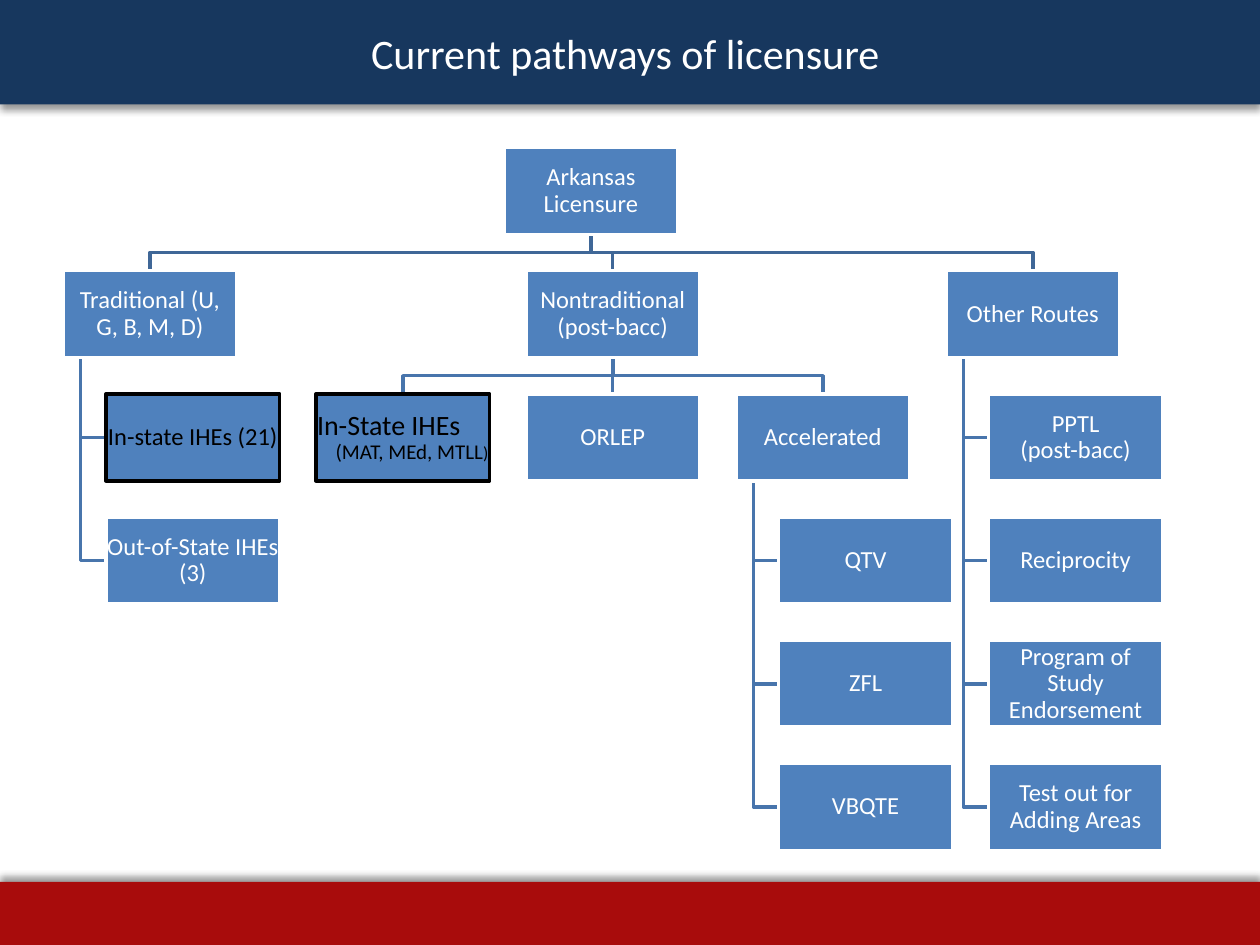
from dataclasses import dataclass, field

from lxml import etree
from pptx import Presentation
from pptx.dml.color import RGBColor
from pptx.enum.shapes import MSO_CONNECTOR, MSO_SHAPE
from pptx.enum.text import MSO_ANCHOR, PP_ALIGN
from pptx.oxml.ns import qn
from pptx.util import Inches, Pt

NAVY, RED, BLUE = "17375E", "A80C0C", "4F81BD"
WHITE, BLACK = "FFFFFF", "000000"
TOP_LINE, SUB_LINE = "3F6797", "4875AC"

# Chart grid, in inches relative to the chart box
NODE_W, NODE_H = 1.38, 0.69
COL, ROW = 5 / 3, 4.89 / 5
INDENT, TRUNK = 0.34, 0.14


@dataclass
class Node:
    text: object  # a string, or paragraphs of (alignment, [(text, size), ...])
    x: float = 0
    children: list = field(default_factory=list)
    hanging: bool = False
    outlined: bool = False


def rgb(value):
    return RGBColor.from_string(value)


def column(index):
    return INDENT + index * COL


def add_run(p, text, size, color):
    r = p.add_run()
    r.text = text
    r.font.size = Pt(size)
    r.font.name = "Calibri"
    r.font.color.rgb = rgb(color)


def add_box(s, left, top, width, height, fill):
    sp = s.shapes.add_shape(MSO_SHAPE.RECTANGLE, Inches(left), Inches(top),
                            Inches(width), Inches(height))
    sp.shadow.inherit = False
    sp.fill.solid()
    sp.fill.fore_color.rgb = rgb(fill)
    sp.line.fill.background()
    return sp


def add_band(s, left, top, width, height, fill, shadow_angle, title=None):
    """Full-width band with a soft shadow and an optional title."""
    sp = add_box(s, left, top, width, height, fill)
    effects = sp._element.spPr.find(qn("a:effectLst"))
    shadow = etree.SubElement(effects, qn("a:outerShdw"), blurRad=str(Pt(4)),
                              dist=str(Pt(3)), dir=str(shadow_angle * 60000),
                              rotWithShape="0")
    color = etree.SubElement(shadow, qn("a:srgbClr"), val=BLACK)
    etree.SubElement(color, qn("a:alpha"), val="40000")
    if title:
        tf = sp.text_frame
        tf.vertical_anchor = MSO_ANCHOR.MIDDLE
        p = tf.paragraphs[0]
        p.alignment = PP_ALIGN.CENTER
        add_run(p, title, 24, WHITE)


def add_link(s, points, color):
    """Straight connector for two points, open elbow line for more."""
    points = [(Inches(x), Inches(y)) for x, y in points]
    if len(points) == 2:
        sp = s.shapes.add_connector(MSO_CONNECTOR.STRAIGHT, *points[0], *points[1])
        etree.SubElement(sp._element.spPr, qn("a:effectLst"))
    else:
        builder = s.shapes.build_freeform(*points[0])
        builder.add_line_segments(points[1:], close=False)
        sp = builder.convert_to_shape()
        sp.fill.background()
        sp.shadow.inherit = False
    sp.line.color.rgb = rgb(color)
    sp.line.width = Pt(2)


def add_node(s, left, top, node):
    sp = add_box(s, left, top, NODE_W, NODE_H, BLUE)
    ink = BLACK if node.outlined else WHITE
    sp.line.color.rgb = rgb(ink)
    sp.line.width = Pt(2)
    tf = sp.text_frame
    tf.word_wrap = True
    tf.vertical_anchor = MSO_ANCHOR.MIDDLE
    tf.margin_left = tf.margin_right = tf.margin_top = tf.margin_bottom = Inches(0.01)
    paragraphs = node.text
    if isinstance(paragraphs, str):
        paragraphs = [(PP_ALIGN.CENTER, [(line, 14)]) for line in paragraphs.split("\n")]
    for i, (alignment, runs) in enumerate(paragraphs):
        p = tf.add_paragraph() if i else tf.paragraphs[0]
        p.alignment = alignment
        p.line_spacing = 0.9
        for text, size in runs:
            add_run(p, text, size, ink)


def add_tree(s, left, top, node, row=0):
    """Places a node and its branch; links go behind the boxes they join."""
    x, y = left + node.x, top + row * ROW
    bottom, next_top = y + NODE_H, y + ROW
    color = SUB_LINE if row else TOP_LINE
    for i, child in enumerate(node.children):
        if node.hanging:
            child.x = node.x + INDENT
            trunk = x + TRUNK
            middle = y + (i + 1) * ROW + NODE_H / 2
            points = [(trunk, bottom), (trunk, middle), (left + child.x, middle)]
        else:
            start, end = x + NODE_W / 2, left + child.x + NODE_W / 2
            bus = (bottom + next_top) / 2
            points = [(start, bottom), (start, bus), (end, bus), (end, next_top)]
            if child.x == node.x:
                points = [points[0], points[-1]]
        add_link(s, points, color)
    add_node(s, x, y, node)
    for i, child in enumerate(node.children):
        add_tree(s, left, top, child, row + 1 + (i if node.hanging else 0))


def licensure_tree():
    traditional = Node("Traditional (U,\nG, B, M, D)", 0, [
        Node("In-state IHEs (21)", outlined=True),
        Node("Out-of-State IHEs (3)"),
    ], hanging=True)
    in_state = Node([
        (PP_ALIGN.LEFT, [("In-State IHEs", 16)]),
        (PP_ALIGN.RIGHT, [("(MAT, MEd, MTLL", 12), (")", 10)]),
    ], column(1), outlined=True)
    accelerated = Node("Accelerated", column(3),
                       [Node(t) for t in ("QTV", "ZFL", "VBQTE")], hanging=True)
    nontraditional = Node("Nontraditional (post-bacc)", column(2),
                          [in_state, Node("ORLEP", column(2)), accelerated])
    other = Node("Other Routes", column(4), [
        Node(t) for t in ("PPTL\n(post-bacc)", "Reciprocity",
                          "Program of Study Endorsement",
                          "Test out for Adding Areas")
    ], hanging=True)
    return Node("Arkansas Licensure", 3.5, [traditional, nontraditional, other])


def main():
    prs = Presentation()
    prs.slide_width, prs.slide_height = Inches(10), Inches(7.5)
    s = prs.slides.add_slide(prs.slide_layouts[6])

    # Organization chart
    add_tree(s, 0.5, 1.17, licensure_tree())

    # Header and footer bands
    add_band(s, 0, 0, 10, 0.83, NAVY, 90, "Current pathways of licensure ")
    add_band(s, 0, 7, 10, 0.5, RED, 270)

    prs.save("out.pptx")


if __name__ == "__main__":
    main()
